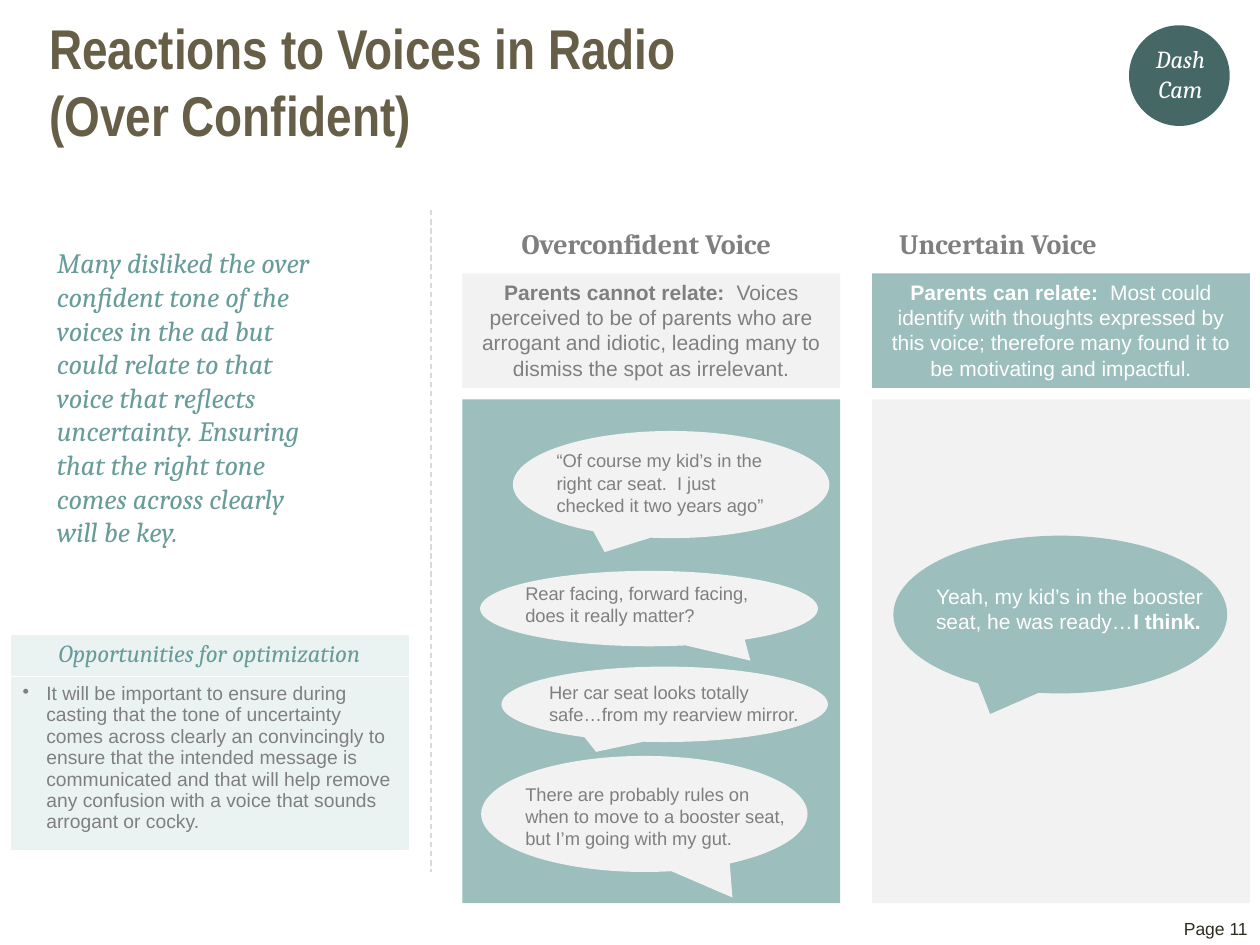
"""Build the slide on reactions to overconfident and uncertain voices."""
from lxml.etree import SubElement
from pptx import Presentation
from pptx.dml.color import RGBColor
from pptx.enum.dml import MSO_LINE
from pptx.enum.shapes import MSO_CONNECTOR, MSO_SHAPE
from pptx.enum.text import MSO_ANCHOR, PP_ALIGN
from pptx.oxml.ns import qn
from pptx.util import Cm, Pt

TEAL, PALE, GRAY, WHITE = "9CBEBD", "F2F2F2", "7F7F7F", "FFFFFF"
DEEP, MINT = "689C9A", "EBF2F2"


def write(frame, text, tail="", size=10.5, font="Arial", color=GRAY, bold=False, italic=False,
          align=PP_ALIGN.LEFT, gap=0, anchor=MSO_ANCHOR.TOP, wrap=True):
    frame.word_wrap = wrap
    frame.vertical_anchor = anchor
    for number, line in enumerate(text.split("\n")):
        para = frame.add_paragraph() if number else frame.paragraphs[0]
        para.alignment = align
        para.space_before = para.space_after = Pt(gap)
        para.text = line
        if tail:
            para.add_run().text = tail
        for span in para.runs:
            span.font.name = font
            span.font.size = Pt(size)
            span.font.color.rgb = RGBColor.from_string(color)
            span.font.italic = italic
            span.font.bold = bold != (bool(tail) and span.text == tail)


def add_shape(kind, place, fill=None):
    shape = page.shapes.add_shape(kind, *map(Cm, place))
    shape.shadow.inherit = False
    shape.line.fill.background()
    if fill:
        shape.fill.solid()
        shape.fill.fore_color.rgb = RGBColor.from_string(fill)
    else:
        shape.fill.background()
    return shape


deck = Presentation()
deck.slide_width, deck.slide_height = Cm(25.4), Cm(19.05)
page = deck.slides.add_slide(deck.slide_layouts[6])

title = page.shapes.add_textbox(Cm(0.99), Cm(0.97), Cm(18.9), Cm(2.01)).text_frame
title.margin_left = title.margin_right = title.margin_top = title.margin_bottom = 0
write(title, "Reactions to Voices in Radio \v(Over Confident)", size=32, font="Arial Narrow",
      color="675E47", bold=True, anchor=MSO_ANCHOR.BOTTOM)

summary = add_shape(MSO_SHAPE.ROUNDED_RECTANGLE, (0.64, 4.65, 6.35, 8.05)).text_frame
summary.margin_left = summary.margin_right = Cm(0.2)
summary.margin_top = summary.margin_bottom = 0
write(summary, "Many disliked the over confident tone of the voices in the ad but could relate to that "
      "voice that reflects uncertainty. Ensuring that the right tone comes across clearly will be key.",
      size=16, font="Cambria", color=DEEP, italic=True)

divider = page.shapes.add_connector(MSO_CONNECTOR.STRAIGHT, Cm(8.69), Cm(4.24), Cm(8.69), Cm(17.58))
divider.line.color.rgb = RGBColor.from_string("D9D9D9")
divider.line.width = Pt(0.75)
divider.line.dash_style = MSO_LINE.DASH
SubElement(divider.element.spPr, qn("a:effectLst"))

footer = page.shapes.add_textbox(Cm(17.58), Cm(17.35), Cm(7.82), Cm(1.7)).text_frame
write(footer, "Page 11", size=10, color="2F2B20", align=PP_ALIGN.RIGHT, anchor=MSO_ANCHOR.BOTTOM)

add_shape(MSO_SHAPE.OVAL, (22.76, 0.51, 2.03, 2.03), "456867")
badge = page.shapes.add_textbox(Cm(21.77), Cm(0.76), Cm(4.06), Cm(1.45)).text_frame
write(badge, "Dash\nCam", size=14, font="Cambria", color=WHITE, italic=True,
      align=PP_ALIGN.CENTER, anchor=MSO_ANCHOR.MIDDLE)

columns = [
    (9.32, 10.02, 6.02, "Overconfident Voice", PALE, GRAY, TEAL, "Parents cannot relate:  ",
     "Voices perceived to be of parents who are arrogant and idiotic, leading many to dismiss "
     "the spot as irrelevant."),
    (17.58, 17.58, 5.08, "Uncertain Voice", TEAL, WHITE, PALE, "Parents can relate:  ",
     "Most could identify with thoughts expressed by this voice; therefore many found it to be "
     "motivating and impactful."),
]
for left, head_left, head_width, heading, fill, color, panel_fill, lead, finding in columns:
    head = page.shapes.add_textbox(Cm(head_left), Cm(4.45), Cm(head_width), Cm(0.94)).text_frame
    write(head, heading, size=16, font="Cambria", bold=True, align=PP_ALIGN.CENTER, gap=4)
    box = add_shape(MSO_SHAPE.RECTANGLE, (left, 5.51, 7.62, 2.31), fill)
    write(box.text_frame, lead, tail=finding, size=12, color=color, bold=True,
          align=PP_ALIGN.CENTER, gap=4)
    add_shape(MSO_SHAPE.RECTANGLE, (left, 8.05, 7.62, 10.16), panel_fill)

left_tail = (-0.21, 0.63)
quotes = [
    ((10.34, 8.69, 6.38, 2.16), left_tail, (10.97, 8.94, 4.88, 1.63), PALE, GRAY, 10.5,
     "“Of course my kid’s in the right car seat.  I just checked it two years ago”", ""),
    ((9.68, 11.51, 6.81, 1.52), (0.3, 0.69), (10.34, 11.61, 5.87, 1.17), PALE, GRAY, 10.5,
     "Rear facing, forward facing, does it really matter?", ""),
    ((10.11, 13.44, 6.58, 1.52), left_tail, (10.82, 13.61, 5.64, 1.17), PALE, GRAY, 10.5,
     "Her car seat looks totally safe…from my rearview mirror.", ""),
    ((9.7, 15.24, 6.58, 2.34), (0.27, 0.72), (10.34, 15.67, 5.92, 1.6), PALE, GRAY, 10.5,
     "There are probably rules on when to move to a booster seat, but I’m going with my gut.", ""),
    ((18.01, 10.8, 6.73, 3.18), left_tail, (18.62, 11.63, 5.92, 1.27), TEAL, WHITE, 12,
     "Yeah, my kid’s in the booster seat, he was ready…", "I think."),
]
for bubble_place, tip, text_place, fill, color, size, quote, ending in quotes:
    bubble = add_shape(MSO_SHAPE.OVAL_CALLOUT, bubble_place, fill)
    bubble.adjustments[0], bubble.adjustments[1] = tip
    speech = page.shapes.add_textbox(*map(Cm, text_place)).text_frame
    write(speech, quote, tail=ending, size=size, color=color, gap=4)

table = page.shapes.add_table(2, 1, Cm(0.2), Cm(12.78), Cm(8.05), Cm(4.37)).table
table.rows[0].height, table.rows[1].height = Cm(0.86), Cm(3.51)
for cell in table.iter_cells():
    cell.fill.solid()
    cell.fill.fore_color.rgb = RGBColor.from_string(MINT)
write(table.cell(0, 0).text_frame, "Opportunities for optimization", size=14, font="Cambria",
      color=DEEP, italic=True, align=PP_ALIGN.CENTER)
advice = table.cell(1, 0).text_frame
write(advice, "It will be important to ensure during casting that the tone of uncertainty comes across "
      "clearly an convincingly to ensure that the intended message is communicated and that will help "
      "remove any confusion with a voice that sounds arrogant or cocky.", size=11, gap=2)
bullet = advice.paragraphs[0]._p.get_or_add_pPr()
bullet.set("marL", str(Cm(0.48)))
bullet.set("indent", str(-Cm(0.48)))
SubElement(bullet, qn("a:buChar")).set("char", "•")

deck.save("out.pptx")
